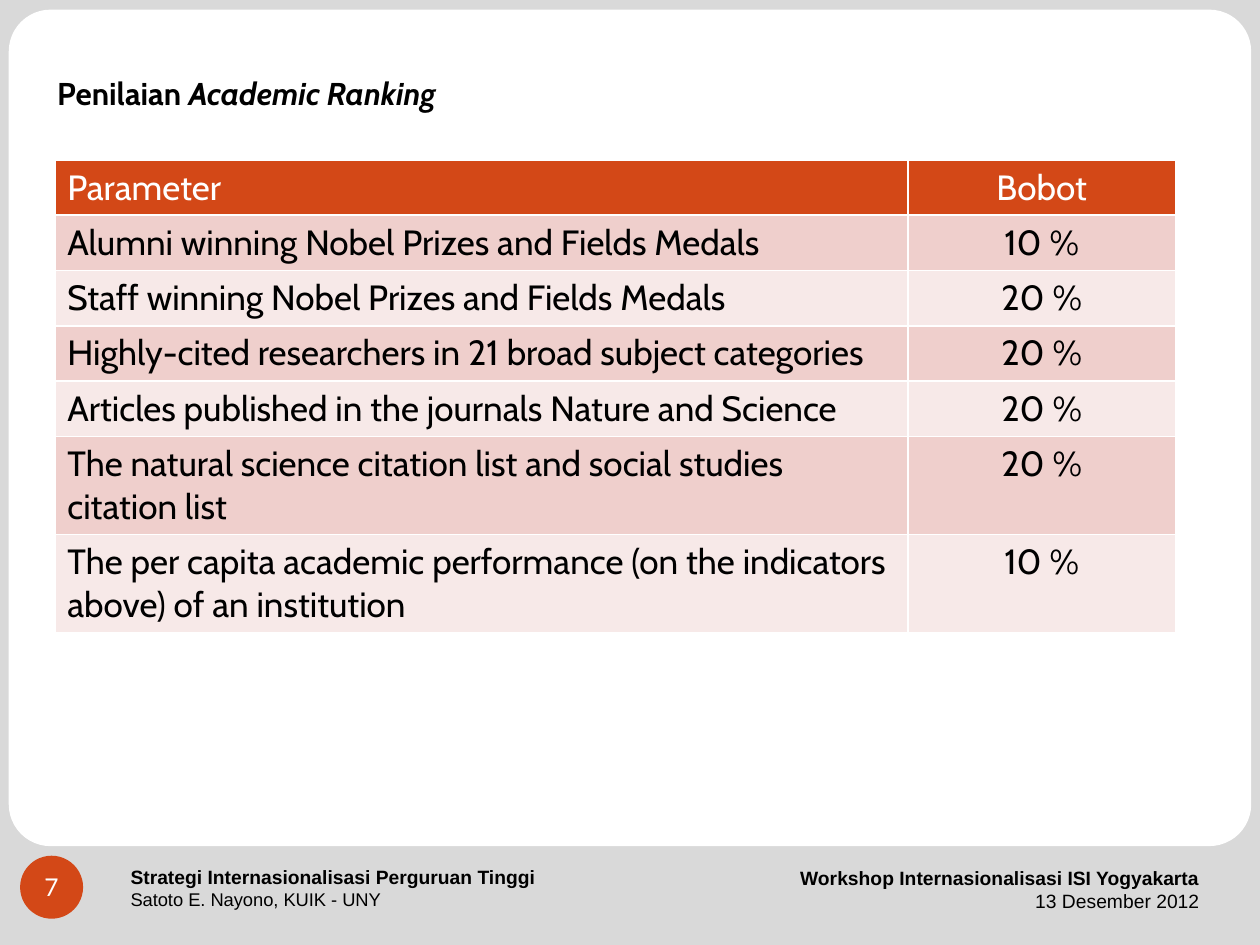
from dataclasses import dataclass

from lxml.etree import SubElement
from pptx import Presentation
from pptx.dml.color import RGBColor
from pptx.enum.shapes import MSO_SHAPE as SHAPE
from pptx.enum.text import MSO_ANCHOR as ANCHOR, MSO_AUTO_SIZE as AUTO, PP_ALIGN as ALIGN
from pptx.oxml.ns import qn
from pptx.util import Pt


@dataclass(frozen=True)
class Theme:
    backdrop: str = "D9D9D9"
    white: str = "FFFFFF"
    black: str = "000000"
    accent: str = "D34817"
    bands: tuple = ("EFCFCC", "F7E9E8")
    head: str = "Cabin"
    foot: str = "Arial"
    number: str = "Lato"
    title_size: float = 18
    table_size: float = 20
    number_size: float = 14
    foot_size: float = 11
    small_size: float = 10.5


class Deck:
    def __init__(self, prs, theme):
        self.t = theme
        self.s = prs.slides.add_slide(prs.slide_layouts[5])

    def runs(self, p, parts, align=ALIGN.LEFT, **base):
        p.alignment = align
        for text, extra in parts:
            r = p.add_run()
            r.text = text
            fmt = {"bold": False, **base, **extra}
            r.font.color.rgb = RGBColor.from_string(fmt.pop("color", self.t.black))
            fmt["size"] = Pt(fmt["size"])
            for key, value in fmt.items():
                setattr(r.font, key, value)

    def shape(self, kind, box, color):
        sp = self.s.shapes.add_shape(kind, *map(Pt, box))
        sp.shadow.inherit = False
        sp.fill.solid()
        sp.fill.fore_color.rgb = RGBColor.from_string(color)
        sp.line.fill.background()
        return sp

    def badge(self, box, text):
        tf = self.shape(SHAPE.OVAL, box, self.t.accent).text_frame
        fmt = {"word_wrap": False, "vertical_anchor": ANCHOR.MIDDLE, "margin_left": 0,
               "margin_right": 0, "margin_top": 0, "margin_bottom": 0}
        for key, value in fmt.items():
            setattr(tf, key, value)
        self.runs(tf.paragraphs[0], [(text, {})], ALIGN.CENTER, name=self.t.number,
                  size=self.t.number_size, color=self.t.white)

    def title(self, box, parts):
        sp = self.s.shapes.title
        sp.left, sp.top, sp.width, sp.height = map(Pt, box)
        tf = sp.text_frame
        fmt = {"word_wrap": True, "vertical_anchor": ANCHOR.TOP, "auto_size": AUTO.NONE}
        for key, value in fmt.items():
            setattr(tf, key, value)
        self.runs(tf.paragraphs[0], parts, name=self.t.head, size=self.t.title_size, bold=True)
        sp.element.getparent().append(sp.element)

    def footer(self, box, heading, detail, size, align=ALIGN.LEFT):
        tf = self.s.shapes.add_textbox(*map(Pt, box)).text_frame
        tf.word_wrap = True
        tf.vertical_anchor = ANCHOR.MIDDLE
        self.runs(tf.paragraphs[0], [(heading, {})], align, name=self.t.foot,
                  size=self.t.foot_size, bold=True)
        self.runs(tf.add_paragraph(), [(detail, {})], align, name=self.t.foot, size=size)

    def borders(self, cell):
        pr = cell._tc.get_or_add_tcPr()
        for i, tag in enumerate(("a:lnL", "a:lnR", "a:lnT", "a:lnB")):
            ln = pr.makeelement(qn(tag), {"w": str(Pt(1))})
            fill = SubElement(ln, qn("a:solidFill"))
            SubElement(fill, qn("a:srgbClr"), val=self.t.white)
            pr.insert(i, ln)

    def table(self, left, top, widths, row_height, rows):
        frame = self.s.shapes.add_table(len(rows), len(widths), Pt(left), Pt(top),
                                        Pt(sum(widths)), Pt(row_height * len(rows)))
        tbl = frame.table
        tbl.first_row = tbl.horz_banding = False
        for col, width in zip(tbl.columns, widths):
            col.width = Pt(width)
        for i, row in enumerate(rows):
            tbl.rows[i].height = Pt(row_height)
            fill = self.t.bands[(i - 1) % 2] if i else self.t.accent
            color = self.t.black if i else self.t.white
            for j, text in enumerate(row):
                cell = tbl.cell(i, j)
                cell.fill.solid()
                cell.fill.fore_color.rgb = RGBColor.from_string(fill)
                self.borders(cell)
                self.runs(cell.text_frame.paragraphs[0], [(text, {})],
                          ALIGN.CENTER if j else ALIGN.LEFT, name=self.t.head,
                          size=self.t.table_size, color=color)


ROWS = [
    ("Parameter", "Bobot"),
    ("Alumni winning Nobel Prizes and Fields Medals", "10 %"),
    ("Staff winning Nobel Prizes and Fields Medals", "20 %"),
    ("Highly-cited researchers in 21 broad subject categories", "20 %"),
    ("Articles published in the journals Nature and Science", "20 %"),
    ("The natural science citation list and social studies citation list", "20 %"),
    ("The per capita academic performance (on the indicators above) of an institution", "10 %"),
]


def main():
    prs = Presentation()
    prs.slide_width, prs.slide_height = Pt(720), Pt(540)
    theme = Theme()
    deck = Deck(prs, theme)
    deck.shape(SHAPE.RECTANGLE, (0, 0, 720, 540), theme.backdrop)
    panel = deck.shape(SHAPE.ROUNDED_RECTANGLE, (5, 5.5, 710, 478), theme.white)
    panel.adjustments[0] = 0.05
    deck.footer((67.5, 489.5, 312, 36), "Strategi Internasionalisasi Perguruan Tinggi",
                "Satoto E. Nayono, KUIK - UNY", theme.small_size)
    deck.footer((450, 489.5, 242.5, 37.5), "Workshop Internasionalisasi ISI Yogyakarta",
                "13 Desember 2012", theme.foot_size, ALIGN.RIGHT)
    deck.badge((11.5, 489, 36, 36), "7")
    deck.title((25.5, 38.5, 674.5, 29), [("Penilaian ", {}), ("Academic Ranking", {"italic": True})])
    deck.table(31.3, 91.4, (487.5, 153), 29.5, ROWS)
    prs.save("out.pptx")


if __name__ == "__main__":
    main()
